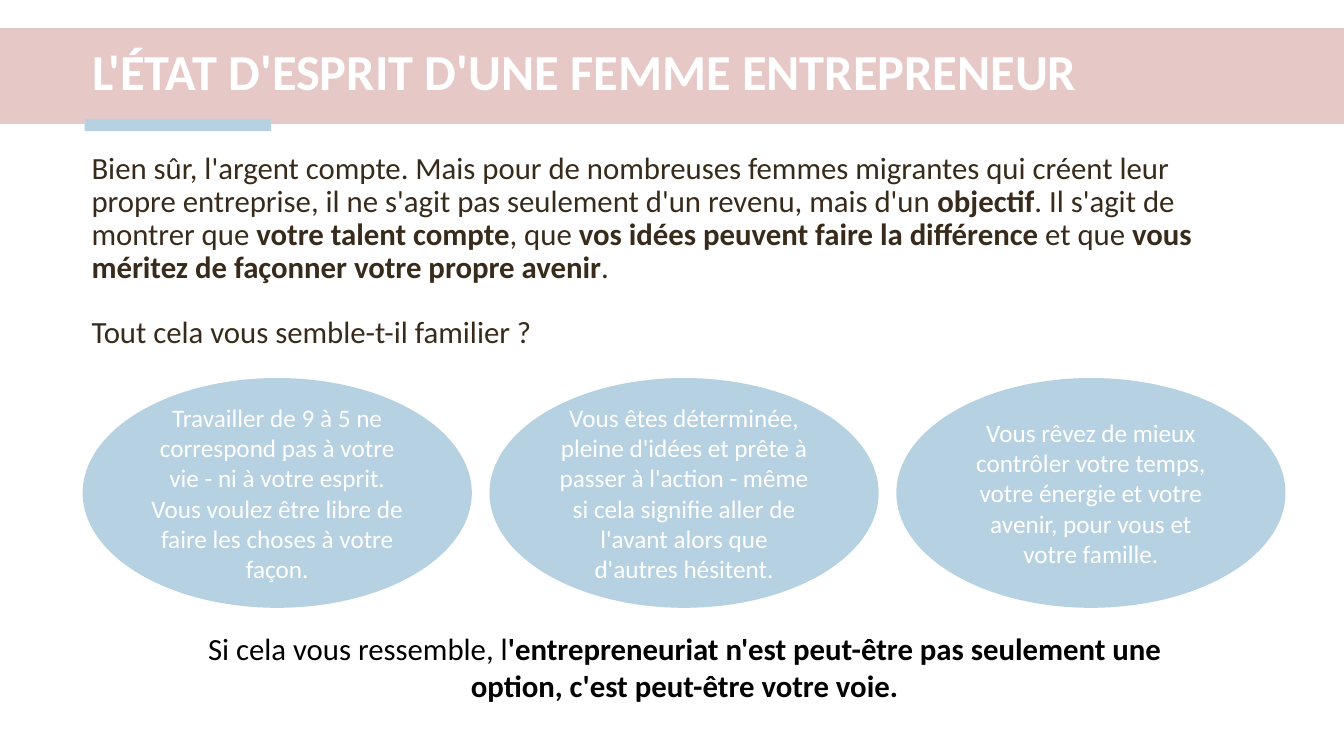
from pptx import Presentation
from pptx.util import Inches, Pt
from pptx.dml.color import RGBColor
from pptx.enum import shapes, text

THEME = {
    "font": "Calibri",
    "pink": "E6C8C7", "blue": "B6D1E1", "white": "FFFFFF",
    "brown": "382B1B", "black": "000000",
    "title": 36, "body": 22, "bubble": 18, "leading": 23.4,
}

TITLE = [("L'ÉTAT D'ESPRIT D'UNE FEMME ENTREPRENEUR", True)]
INTRO = [
    [
        ("Bien sûr, l'argent compte. Mais pour de nombreuses femmes migrantes qui créent leur "
         "propre entreprise, il ne s'agit pas seulement d'un revenu, mais d'un ", False),
        ("objectif", True),
        (". Il s'agit de montrer que ", False),
        ("votre talent compte", True),
        (", que ", False),
        ("vos idées peuvent faire la différence ", True),
        ("et que ", False),
        ("vous méritez de façonner votre propre avenir", True),
        (".", False),
    ],
    [("Tout cela vous semble-t-il familier ?", False)],
]
BUBBLES = [
    "Travailler de 9 à 5 ne correspond pas à votre vie - ni à votre esprit. "
    "Vous voulez être libre de faire les choses à votre façon.",
    "Vous êtes déterminée, pleine d'idées et prête à passer à l'action - même "
    "si cela signifie aller de l'avant alors que d'autres hésitent.",
    "Vous rêvez de mieux contrôler votre temps, votre énergie et votre avenir, "
    "pour vous et votre famille.",
]
CLOSING = [
    ("Si cela vous ressemble, l", False),
    ("'entrepreneuriat n'est peut-être pas seulement une option, "
     "c'est peut-être votre voie.", True),
]

BUBBLE_LEFT, BUBBLE_TOP, BUBBLE_W, BUBBLE_H, BUBBLE_STEP = 0.82, 3.75, 3.86, 2.28, 4.035


def color(name):
    return RGBColor.from_string(THEME[name])


def add_filled(s, kind, box, fill):
    sp = s.shapes.add_shape(kind, *map(Inches, box))
    sp.shadow.inherit = False
    sp.fill.solid()
    sp.fill.fore_color.rgb = color(fill)
    sp.line.fill.background()
    return sp


def write(sp, paragraphs, size, ink, align=text.PP_ALIGN.LEFT,
          anchor=text.MSO_ANCHOR.TOP, spacing=None, gap=0):
    tf = sp.text_frame
    tf.word_wrap = True
    tf.vertical_anchor = anchor
    for i, runs in enumerate(paragraphs):
        p = tf.add_paragraph() if i else tf.paragraphs[0]
        p.alignment = align
        p.line_spacing = spacing
        if i:
            p.space_before = Pt(gap)
        p.font.name = THEME["font"]
        p.font.size = Pt(THEME[size])
        p.font.color.rgb = color(ink)
        for words, bold in runs:
            r = p.add_run()
            r.text = words
            r.font.bold = bold


def add_text(s, box, paragraphs, size, ink, **options):
    sp = s.shapes.add_textbox(*map(Inches, box))
    write(sp, paragraphs, size, ink, **options)


def main():
    prs = Presentation()
    prs.slide_width, prs.slide_height = Inches(13.33), Inches(7.5)
    s = prs.slides.add_slide(prs.slide_layouts[6])
    center, middle = text.PP_ALIGN.CENTER, text.MSO_ANCHOR.MIDDLE
    leading = Pt(THEME["leading"])

    add_filled(s, shapes.MSO_SHAPE.RECTANGLE, (0, 0.28, 13.33, 0.95), "pink")
    add_filled(s, shapes.MSO_SHAPE.RECTANGLE, (0.84, 1.18, 1.85, 0.12), "blue")
    add_text(s, (0.82, 0.34, 11.93, 0.79), [TITLE], "title", "white",
             anchor=middle, spacing=0.9)
    add_text(s, (0.81, 1.47, 11.56, 2.14), INTRO, "body", "brown",
             spacing=leading, gap=THEME["leading"])
    for i, words in enumerate(BUBBLES):
        box = (BUBBLE_LEFT + i * BUBBLE_STEP, BUBBLE_TOP, BUBBLE_W, BUBBLE_H)
        sp = add_filled(s, shapes.MSO_SHAPE.OVAL, box, "blue")
        write(sp, [[(words, False)]], "bubble", "white", align=center, anchor=middle)
    add_text(s, (1.96, 6.2, 9.66, 0.84), [CLOSING], "body", "black", align=center)

    prs.save("out.pptx")


if __name__ == "__main__":
    main()
